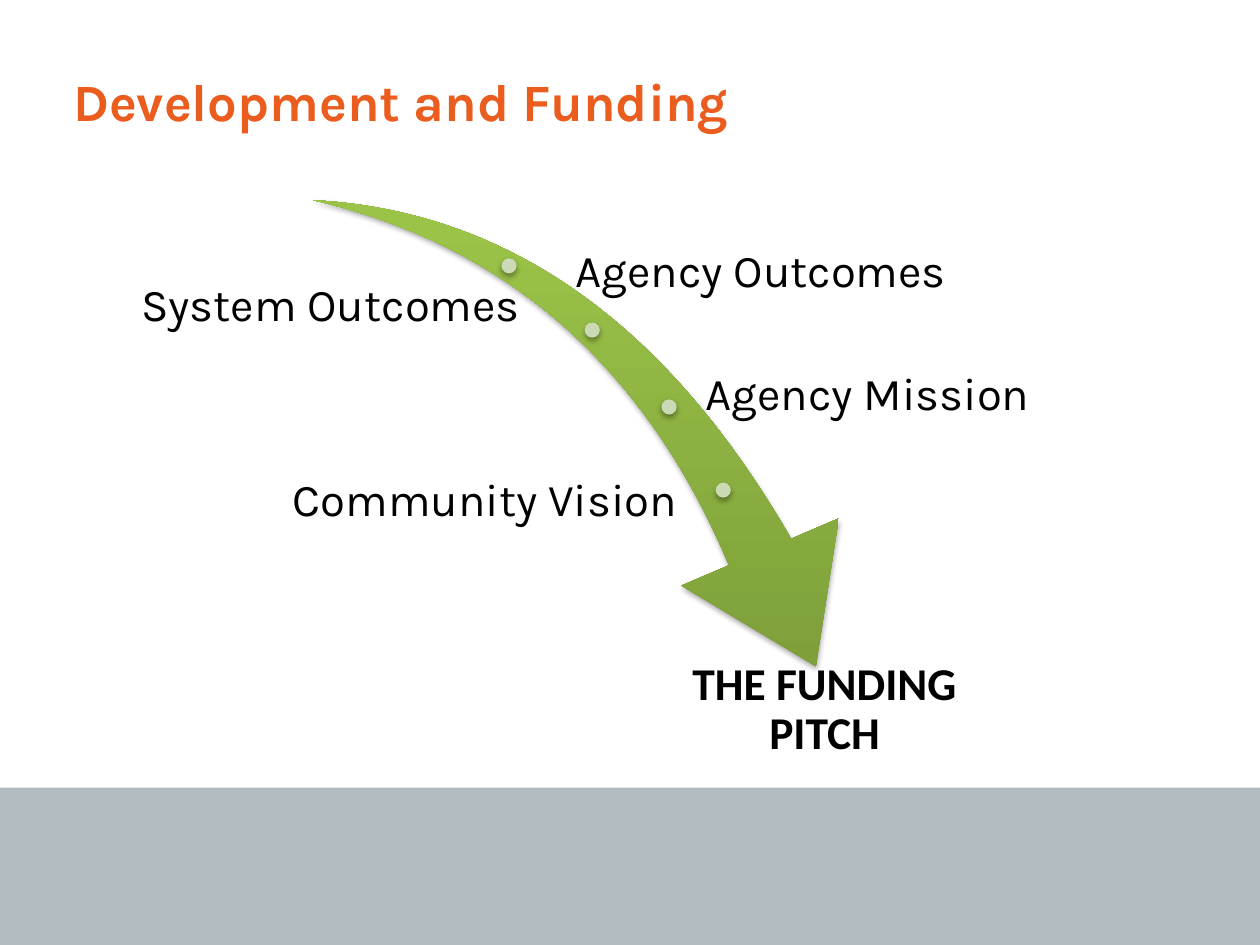
import pptx
import pptx.util
import pptx.dml.color
import pptx.enum.shapes
import pptx.enum.text
import pptx.oxml
from pptx.util import Inches

DRAWING_NS = 'xmlns:a="http://schemas.openxmlformats.org/drawingml/2006/main"'
SHAPES = pptx.enum.shapes.MSO_SHAPE
ALIGN = pptx.enum.text.PP_ALIGN
ANCHOR = pptx.enum.text.MSO_ANCHOR


def color(hex_string):
    return pptx.dml.color.RGBColor.from_string(hex_string)


def add_soft_shadow(shape):
    shape.shadow.inherit = False
    effects = shape.element.spPr.find(pptx.oxml.ns.qn("a:effectLst"))
    effects.append(pptx.oxml.parse_xml(
        f'<a:outerShdw {DRAWING_NS} blurRad="40000" dist="23000" dir="5400000" rotWithShape="0">'
        '<a:srgbClr val="000000"><a:alpha val="35000"/></a:srgbClr></a:outerShdw>'))


presentation = pptx.Presentation()
presentation.slide_width = Inches(10)
presentation.slide_height = Inches(7.5)
slide = presentation.slides.add_slide(presentation.slide_layouts[5])

# Footer band
band = slide.shapes.add_shape(SHAPES.RECTANGLE, Inches(0), Inches(6.25), Inches(10), Inches(1.25))
band.shadow.inherit = False
band.fill.solid()
band.fill.fore_color.rgb = color("B0BCC0")
band.line.fill.background()

# Title
title = slide.shapes.title
title.left, title.top = Inches(0.48), Inches(0.5)
title.width, title.height = Inches(8.27), Inches(0.61)
frame = title.text_frame
frame.word_wrap = True
frame.auto_size = pptx.enum.text.MSO_AUTO_SIZE.SHAPE_TO_FIT_TEXT
frame.vertical_anchor = ANCHOR.TOP
paragraph = frame.paragraphs[0]
paragraph.alignment = ALIGN.LEFT
run = paragraph.add_run()
run.text = "Development and Funding"
run.font.name = "Karla"
run.font.size = pptx.util.Pt(30)
run.font.bold = True
run.font.color.rgb = color("EA5D1E")

# Swoosh arrow, with a gradient that stays vertical despite the rotation
arrow = slide.shapes.add_shape(SHAPES.SWOOSH_ARROW, Inches(2.38), Inches(1.73), Inches(4.69), Inches(3.27))
arrow.rotation = 73.3
arrow.adjustments[0] = 0.163
arrow.adjustments[1] = 0.314
arrow.line.fill.background()
stops = "".join(
    f'<a:gs pos="{percent * 1000}"><a:srgbClr val="{hex_string}"/></a:gs>'
    for percent, hex_string in [(0, "779737"), (80, "9BC348"), (100, "9DC746")])
arrow.element.spPr.find(pptx.oxml.ns.qn("a:prstGeom")).addnext(pptx.oxml.parse_xml(
    f'<a:gradFill {DRAWING_NS} rotWithShape="0"><a:gsLst>{stops}</a:gsLst>'
    '<a:lin ang="16200000" scaled="0"/></a:gradFill>'))
add_soft_shadow(arrow)

# Milestone dots along the arrow
for left, top in [(3.98, 2.05), (4.64, 2.56), (5.25, 3.17), (5.68, 3.83)]:
    dot = slide.shapes.add_shape(SHAPES.OVAL, Inches(left), Inches(top), Inches(0.12), Inches(0.12))
    dot.fill.solid()
    dot.fill.fore_color.rgb = color("CBDAB5")
    dot.line.fill.background()
    add_soft_shadow(dot)

# Labels: text, left, top, width, alignment, anchor, font, bold
labels = [
    ("Agency Outcomes", 4.28, 1.53, 3.52, ALIGN.CENTER, ANCHOR.BOTTOM, "Karla", False),
    ("Agency Mission", 5.56, 2.71, 3.29, ALIGN.LEFT, ANCHOR.MIDDLE, "Karla", False),
    ("System Outcomes", 0.86, 2, 3.31, ALIGN.RIGHT, ANCHOR.MIDDLE, "Karla", False),
    ("Community Vision", 2.13, 3.55, 3.29, ALIGN.RIGHT, ANCHOR.MIDDLE, "Karla", False),
    ("THE FUNDING PITCH", 5.05, 5.21, 2.99, ALIGN.CENTER, ANCHOR.TOP, "Calibri", True),
]
for text, left, top, width, alignment, anchor, font_name, bold in labels:
    label = slide.shapes.add_textbox(Inches(left), Inches(top), Inches(width), Inches(0.87))
    frame = label.text_frame
    frame.word_wrap = True
    frame.vertical_anchor = anchor
    frame.margin_left = frame.margin_right = Inches(0.04)
    frame.margin_top = frame.margin_bottom = Inches(0.04)
    paragraph = frame.paragraphs[0]
    paragraph.alignment = alignment
    paragraph.line_spacing = 0.9
    run = paragraph.add_run()
    run.text = text
    run.font.name = font_name
    run.font.size = pptx.util.Pt(26)
    run.font.bold = bold
    run.font.color.rgb = color("000000")

presentation.save("out.pptx")
